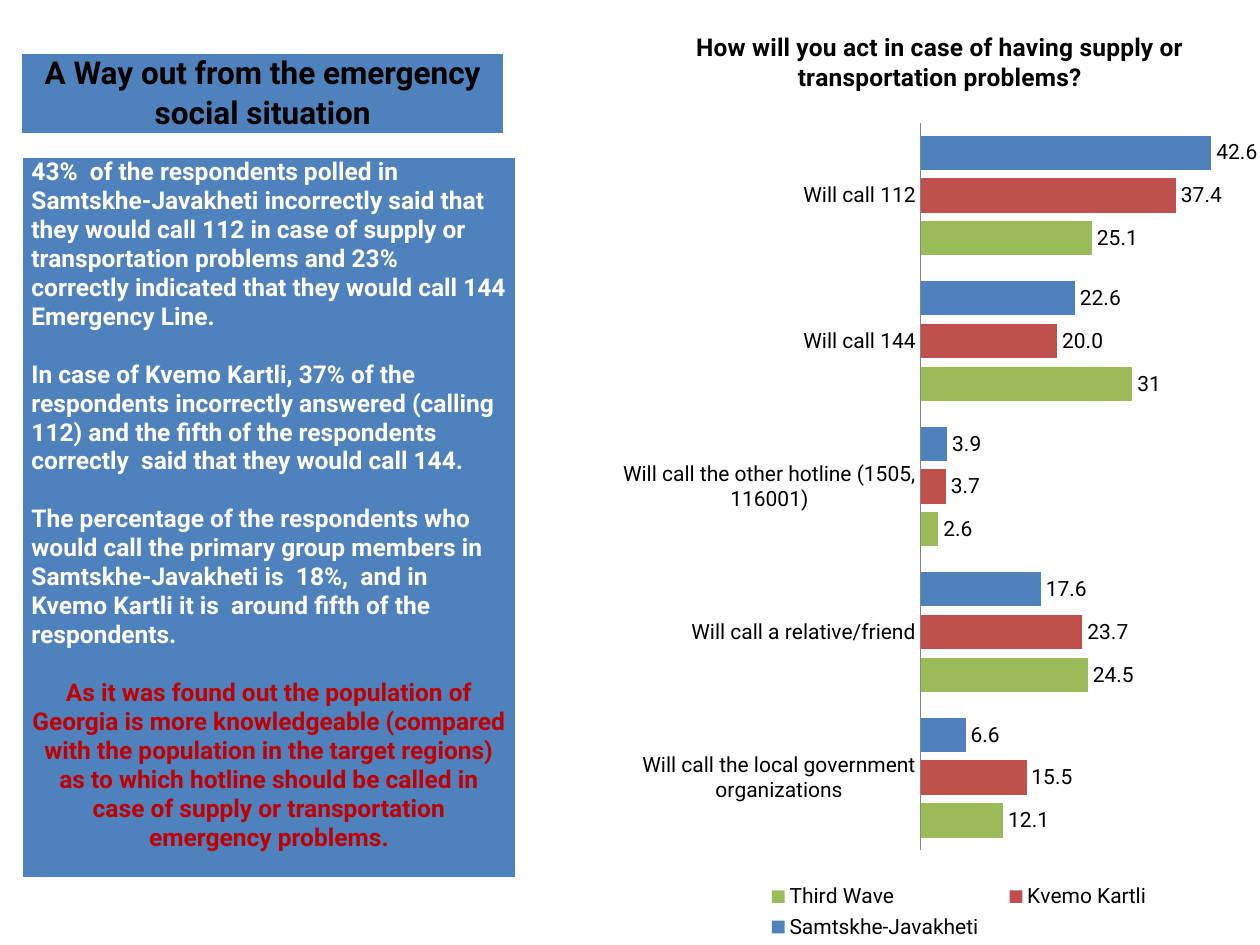
from lxml.etree import SubElement
from pptx import Presentation
from pptx.chart.data import CategoryChartData
from pptx.dml.color import RGBColor
from pptx.enum.chart import XL_CHART_TYPE, XL_LABEL_POSITION, XL_LEGEND_POSITION, XL_TICK_MARK
from pptx.enum.text import PP_ALIGN
from pptx.oxml import parse_xml
from pptx.oxml.ns import nsdecls, qn
from pptx.util import Inches, Pt

FONT = "Roboto"
BLUE, RED, GREEN = "4F81BD", "C0504D", "9BBB59"
BLACK, WHITE, DARK_RED = "000000", "FFFFFF", "C00000"

CATEGORIES = [
    "Will call 112",
    "Will call 144",
    "Will call the other hotline (1505, 116001)",
    "Will call a relative/friend",
    "Will call the local government organizations",
]
SERIES = [
    ("Samtskhe-Javakheti", [42.6, 22.6, 3.9, 17.6, 6.6], BLUE, "###0.0"),
    ("Kvemo Kartli", [37.4, 20, 3.7, 23.7, 15.5], RED, "###0.0"),
    ("Third Wave", [25.1, 31, 2.6, 24.5, 12.1], GREEN, "General"),
]
FINDINGS = [
    "43%  of the respondents polled in Samtskhe-Javakheti incorrectly said that they would call 112 "
    "in case of supply or transportation problems and 23%  correctly indicated that they would call "
    "144 Emergency Line.",
    "In case of Kvemo Kartli, 37% of the respondents incorrectly answered (calling 112) and the fifth "
    "of the respondents correctly  said that they would call 144.",
    "The percentage of the respondents who would call the primary group members in "
    "Samtskhe-Javakheti is  18%,  and in Kvemo Kartli it is  around fifth of the respondents.",
]
CONCLUSION = (
    "As it was found out the population of Georgia is more knowledgeable (compared with the "
    "population in the target regions) as to which hotline should be called in case of supply or "
    "transportation emergency problems."
)


def color(value):
    return RGBColor.from_string(value)


def set_font(font, size, shade=BLACK, bold=False):
    font.name, font.size, font.bold = FONT, Pt(size), bold
    font.color.rgb = color(shade)


def set_borders(cell):
    properties = cell._tc.get_or_add_tcPr()
    for index, (side, width) in enumerate([("L", 1), ("R", 1), ("T", 1), ("B", 3)]):
        properties.insert(index, parse_xml(
            f'<a:ln{side} {nsdecls("a")} w="{Pt(width)}"><a:solidFill>'
            f'<a:srgbClr val="{WHITE}"/></a:solidFill></a:ln{side}>'))


def place_part(element, index, inner=False, **fractions):
    """Fix a chart part at fractions of the chart's width and height."""
    for old in element.findall(qn("c:layout")):
        element.remove(old)
    layout = parse_xml(f'<c:layout {nsdecls("c")}/>')
    element.insert(index, layout)
    manual = SubElement(layout, qn("c:manualLayout"))
    if inner:
        SubElement(manual, qn("c:layoutTarget"), val="inner")
    for axis in "xy":
        SubElement(manual, qn(f"c:{axis}Mode"), val="edge")
    for name, value in fractions.items():
        SubElement(manual, qn(f"c:{name}"), val=str(value))


class SurveySlide:
    def __init__(self, deck):
        self.shapes = deck.slides.add_slide(deck.slide_layouts[6]).shapes

    def panel(self, left, top, width, height, size, paragraphs, line_spacing=None, gap=0):
        """Add a one-cell table; paragraphs are (text, colour, alignment)."""
        frame = self.shapes.add_table(
            1, 1, Inches(left), Inches(top), Inches(width), Inches(height))
        cell = frame.table.cell(0, 0)
        cell.fill.solid()
        cell.fill.fore_color.rgb = color(BLUE)
        set_borders(cell)
        cell.margin_left = cell.margin_right = Inches(0.07)
        cell.margin_top = cell.margin_bottom = 0
        cell.text_frame.text = "\n".join(text for text, _, _ in paragraphs)
        for index, para in enumerate(cell.text_frame.paragraphs):
            _, shade, para.alignment = paragraphs[index]
            para.line_spacing = line_spacing
            para.space_before = Pt(gap if index else 0)
            for span in para.runs:
                set_font(span.font, size, shade, bold=True)

    def bar_chart(self, left, top, width, height, title):
        data = CategoryChartData()
        data.categories = CATEGORIES
        for name, values, _, number_format in SERIES:
            data.add_series(name, values, number_format)
        chart = self.shapes.add_chart(
            XL_CHART_TYPE.BAR_CLUSTERED, Inches(left), Inches(top),
            Inches(width), Inches(height), data).chart
        set_font(chart.font, 12)
        chart.has_title = True
        chart.chart_title.text_frame.text = title
        set_font(chart.chart_title.text_frame.paragraphs[0].runs[0].font, 14, bold=True)

        plot = chart.plots[0]
        plot.gap_width, plot.overlap, plot.vary_by_categories = 75, -25, False
        for series, (_, _, shade, number_format) in zip(plot.series, SERIES):
            series.format.fill.solid()
            series.format.fill.fore_color.rgb = color(shade)
            labels = series.data_labels
            labels.show_value = True
            labels.position = XL_LABEL_POSITION.OUTSIDE_END
            labels.number_format, labels.number_format_is_linked = number_format, False
            set_font(labels.font, 12)

        categories, values = chart.category_axis, chart.value_axis
        categories.reverse_order = True
        categories.major_tick_mark = XL_TICK_MARK.NONE
        categories.format.line.color.rgb = color("868686")
        values.visible = values.has_major_gridlines = False
        values.minimum_scale, values.maximum_scale = 0, 45

        chart.has_legend = True
        chart.legend.position = XL_LEGEND_POSITION.BOTTOM
        chart.legend.include_in_layout = False
        set_font(chart.legend.font, 12)
        place_part(chart.legend._element, 1, x=0.2, y=0.93, w=0.66, h=0.07)
        plot_area = chart._chartSpace.chart.plotArea
        place_part(plot_area, 0, inner=True, x=0.47, y=0.13, w=0.48, h=0.77)


def main():
    deck = Presentation()
    deck.slide_width, deck.slide_height = Inches(10), Inches(7.5)
    page = SurveySlide(deck)
    page.bar_chart(4.92, 0, 5.08, 7.5,
                   "How will you act in case of having supply or transportation problems?")
    page.panel(0.17, 0.42, 3.83, 0.65, 18,
               [("A Way out from the emergency social situation", BLACK, PP_ALIGN.CENTER)],
               line_spacing=1.07)
    findings = [(text, WHITE, PP_ALIGN.LEFT) for text in FINDINGS]
    page.panel(0.18, 1.25, 3.91, 5.73, 14,
               findings + [(CONCLUSION, DARK_RED, PP_ALIGN.CENTER)], gap=16.5)
    deck.save("out.pptx")


if __name__ == "__main__":
    main()
